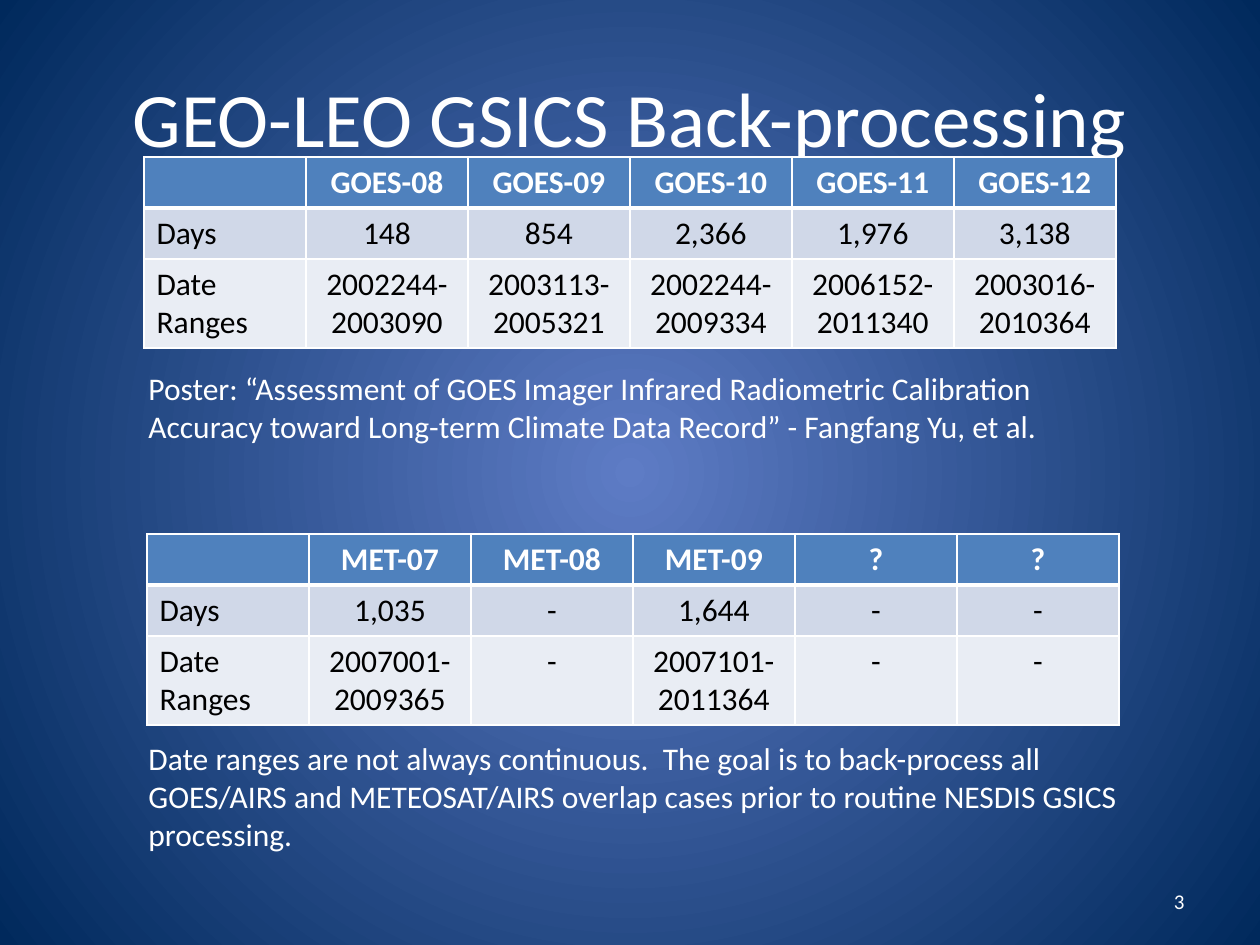
from lxml.etree import SubElement
from pptx import Presentation
from pptx.dml.color import RGBColor
from pptx.enum.text import MSO_ANCHOR, PP_ALIGN
from pptx.oxml import parse_xml
from pptx.oxml.ns import nsdecls, qn
from pptx.util import Emu, Pt

EMU_PER_PX = 914400 / 126
FONT = "Calibri"
COLORS = {
    "glow": "5E7CC5",
    "navy": "00295C",
    "white": "FFFFFF",
    "black": "000000",
    "header": "4F81BD",
    "days": "D0D8E8",
    "ranges": "E9EDF4",
}
COLUMN_WIDTH = 162
ROW_HEIGHTS = (51, 51, 89)
ROW_FILLS = ("header", "days", "ranges")

GOES_ROWS = (
    ("", "GOES-08", "GOES-09", "GOES-10", "GOES-11", "GOES-12"),
    ("Days", "148", "854", "2,366", "1,976", "3,138"),
    ("Date Ranges", "2002244-2003090", "2003113-2005321", "2002244-2009334",
     "2006152-2011340", "2003016-2010364"),
)
MET_ROWS = (
    ("", "MET-07", "MET-08", "MET-09", "?", "?"),
    ("Days", "1,035", "-", "1,644", "-", "-"),
    ("Date Ranges", "2007001-2009365", "-", "2007101-2011364", "-", "-"),
)
POSTER = ("Poster: “Assessment of GOES Imager Infrared Radiometric Calibration "
          "Accuracy toward Long-term Climate Data Record” - Fangfang Yu, et al.")
GOAL = ("Date ranges are not always continuous.  The goal is to back-process all "
        "GOES/AIRS and METEOSAT/AIRS overlap cases prior to routine NESDIS GSICS "
        "processing.")


def px(length):
    return Emu(round(length * EMU_PER_PX))


def rgb(name):
    return RGBColor.from_string(COLORS[name])


def paint_background(page):
    """Fill the page with a circular gradient that glows from the centre."""
    fill = page.background.fill
    fill.gradient()
    for stop, name in zip(fill.gradient_stops, ("glow", "navy")):
        stop.color.rgb = rgb(name)
    gradient = page.element.find(".//" + qn("a:gradFill"))
    circle = parse_xml(
        f'<a:path {nsdecls("a")} path="circle">'
        '<a:fillToRect l="50000" t="50000" r="50000" b="50000"/></a:path>')
    gradient.replace(gradient.find(qn("a:lin")), circle)


def write(frame, text, size, color, align=PP_ALIGN.LEFT, bold=False):
    para = frame.paragraphs[0]
    para.alignment = align
    span = para.add_run()
    span.text = text
    span.font.name = FONT
    span.font.size = Pt(size)
    span.font.bold = bold
    span.font.color.rgb = rgb(color)


def add_text(page, place, text, size=18, align=PP_ALIGN.LEFT,
             anchor=MSO_ANCHOR.TOP):
    box = page.shapes.add_textbox(*map(px, place))
    frame = box.text_frame
    frame.word_wrap = True
    frame.vertical_anchor = anchor
    write(frame, text, size, "white", align)


def add_borders(cell, top, bottom):
    """Draw white cell edges; top and bottom are widths in points."""
    properties = cell._tc.get_or_add_tcPr()
    for side, width in (("L", 1), ("R", 1), ("T", top), ("B", bottom)):
        line = SubElement(properties, qn(f"a:ln{side}"), w=str(Pt(width)))
        solid = SubElement(line, qn("a:solidFill"))
        SubElement(solid, qn("a:srgbClr"), val=COLORS["white"])


def add_coverage_table(page, left, top, rows):
    columns = len(rows[0])
    table = page.shapes.add_table(
        len(rows), columns, px(left), px(top),
        px(columns * COLUMN_WIDTH), px(sum(ROW_HEIGHTS))).table
    for column in table.columns:
        column.width = px(COLUMN_WIDTH)
    for r, values in enumerate(rows):
        table.rows[r].height = px(ROW_HEIGHTS[r])
        header = r == 0
        for c, text in enumerate(values):
            cell = table.cell(r, c)
            add_borders(cell, top=3 if r == 1 else 1, bottom=3 if header else 1)
            cell.fill.solid()
            cell.fill.fore_color.rgb = rgb(ROW_FILLS[r])
            if text:
                write(cell.text_frame, text, 18, "white" if header else "black",
                      PP_ALIGN.CENTER if c else PP_ALIGN.LEFT, header)


def main():
    deck = Presentation()
    deck.slide_width, deck.slide_height = px(1260), px(945)
    page = deck.slides.add_slide(deck.slide_layouts[6])
    paint_background(page)
    add_text(page, (63, 38, 1134, 157), "GEO-LEO GSICS Back-processing", 44,
             PP_ALIGN.CENTER, MSO_ANCHOR.MIDDLE)
    add_coverage_table(page, 144, 157, GOES_ROWS)
    add_text(page, (136, 733, 1029, 127), GOAL)
    add_coverage_table(page, 147, 534, MET_ROWS)
    add_text(page, (136, 363, 1029, 89), POSTER)
    add_text(page, (903, 876, 294, 50), "3", 12, PP_ALIGN.RIGHT,
             MSO_ANCHOR.MIDDLE)
    deck.save("out.pptx")


if __name__ == "__main__":
    main()
